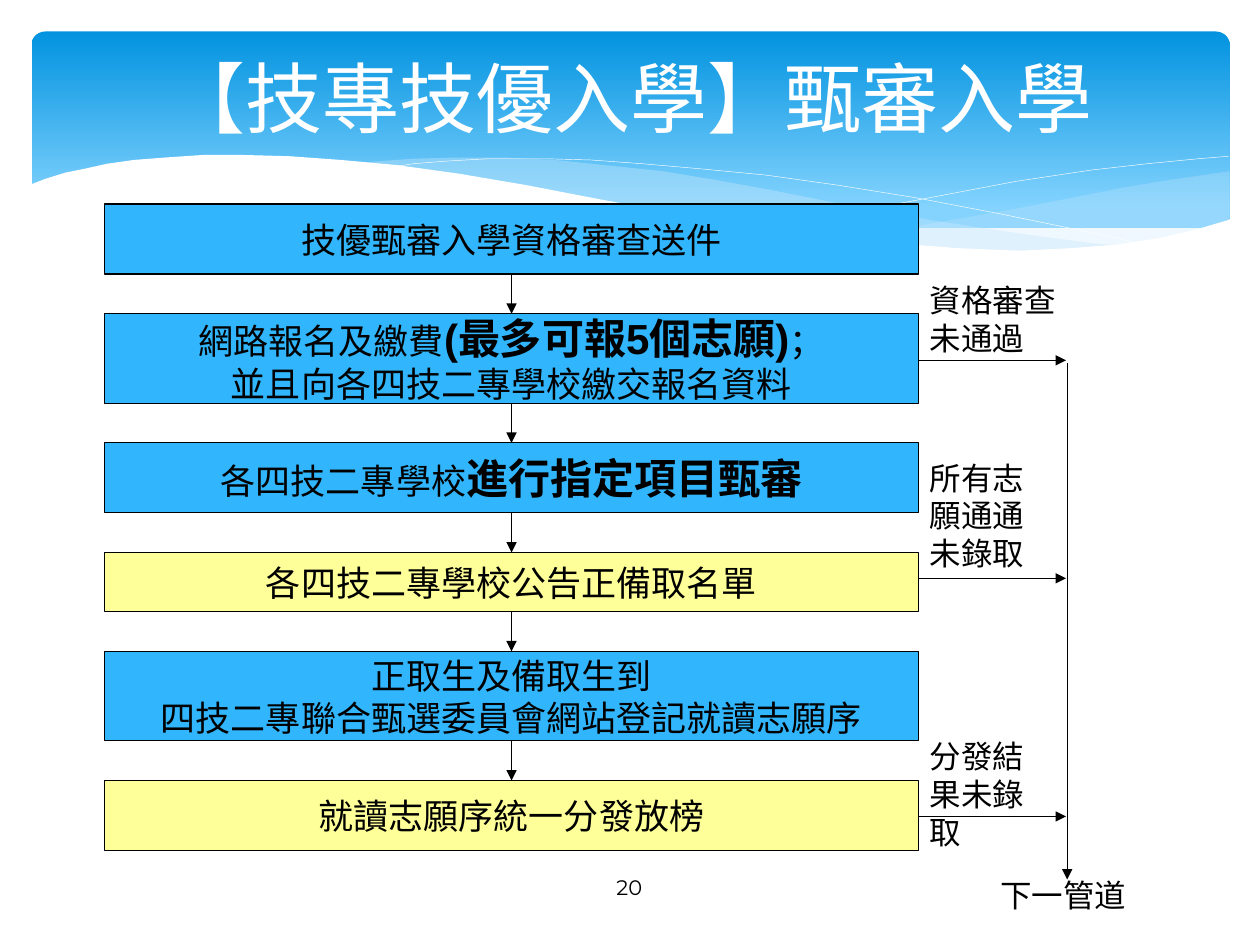
from lxml.etree import SubElement
from pptx import Presentation
from pptx.dml.color import RGBColor
from pptx.enum.shapes import MSO_CONNECTOR as CONN, MSO_SHAPE as SHAPE
from pptx.enum.text import MSO_ANCHOR as ANCHOR, PP_ALIGN as ALIGN
from pptx.oxml.ns import qn
from pptx.util import Inches, Pt

COLS, ROWS = 1000, 750
BLUE, YELLOW, PALE, WHITE, BLACK = "31B6FD", "FFFF99", "C6E7FC", "FFFFFF", "000000"


def color(value):
    return RGBColor.from_string(value)


class Deck:
    def __init__(self, prs):
        self.s = prs.slides.add_slide(prs.slide_layouts[6])
        self.col = prs.slide_width / COLS
        self.row = prs.slide_height / ROWS
        self.font = "Arial"

    def place(self, x, y, w, h):
        return [round(v) for v in (x * self.col, y * self.row, w * self.col, h * self.row)]

    def paint(self, sp, fill=None, line=None, width=0.75, alpha=None):
        sp.shadow.inherit = False
        if fill:
            sp.fill.solid()
            sp.fill.fore_color.rgb = color(fill)
        else:
            sp.fill.background()
        if alpha:
            node = sp._element.spPr.find(qn("a:solidFill"))[0]
            SubElement(node, qn("a:alpha"), val=str(alpha * 1000))
        if line:
            sp.line.color.rgb = color(line)
            sp.line.width = Pt(width)
        else:
            sp.line.fill.background()

    def set_text(self, sp, lines, size, ink=BLACK, font=None, align=ALIGN.CENTER,
                 anchor=ANCHOR.MIDDLE, wrap=True):
        tf = sp.text_frame
        tf.word_wrap = wrap
        tf.vertical_anchor = anchor
        for i, runs in enumerate(lines):
            p = tf.add_paragraph() if i else tf.paragraphs[0]
            p.alignment = align
            for text, strong in runs:
                r = p.add_run()
                r.text = text
                r.font.name = font or self.font
                r.font.size = Pt(size + 4 if strong else size)
                r.font.bold = strong
                r.font.color.rgb = color(ink)

    def banner(self, x, y, w, h, top, bottom):
        sp = self.s.shapes.add_shape(SHAPE.ROUNDED_RECTANGLE, *self.place(x, y, w, h))
        sp.adjustments[0] = 0.07
        self.paint(sp)
        sp.fill.gradient()
        sp.fill.gradient_angle = 270
        for stop, position, shade in zip(sp.fill.gradient_stops, (0, 0.9), (top, bottom)):
            stop.position = position
            stop.color.rgb = color(shade)

    def wave(self, points, fill=None, alpha=None):
        fb = self.s.shapes.build_freeform(*points[0], scale=(self.col, self.row))
        fb.add_line_segments(points[1:], close=bool(fill))
        self.paint(fb.convert_to_shape(), fill, None if fill else WHITE, 0.25, alpha)

    def box(self, x, y, w, h, fill, lines):
        sp = self.s.shapes.add_shape(SHAPE.RECTANGLE, *self.place(x, y, w, h))
        self.paint(sp, fill, BLACK)
        self.set_text(sp, lines, 20, wrap=False)

    def label(self, x, y, w, h, text, size=18, **style):
        sp = self.s.shapes.add_textbox(*self.place(x, y, w, h))
        self.set_text(sp, [[(text, False)]], size, **style)

    def arrow(self, x1, y1, x2, y2):
        ends = self.place(x1, y1, x2, y2)
        cn = self.s.shapes.add_connector(CONN.STRAIGHT, *ends)
        cn.line.color.rgb = color(BLACK)
        cn.line.width = Pt(0.75)
        spPr = cn._element.spPr
        SubElement(spPr.find(qn("a:ln")), qn("a:tailEnd"), type="triangle")
        SubElement(spPr, qn("a:effectLst"))


RIGHT_WAVE = [
    (975, 136), (948, 140), (921, 144), (891, 149), (861, 155), (805, 166), (753, 175),
    (706, 183), (661, 189), (691, 193), (718, 195), (745, 197), (769, 199), (803, 199),
    (835, 199), (863, 197), (889, 195), (913, 191), (935, 186), (963, 179), (976, 174),
    (976, 136)]
MIDDLE_WAVE = [
    (893, 195), (866, 193), (807, 185), (741, 175), (668, 162), (613, 151), (569, 143),
    (527, 136), (489, 132), (441, 127), (399, 125), (361, 125), (328, 126), (286, 129),
    (323, 133), (362, 138), (404, 145), (449, 154), (530, 169), (584, 178), (634, 186),
    (680, 192), (722, 196), (761, 199), (796, 200), (838, 200), (867, 198), (893, 195)]
FALLING_LINE = [
    (309, 133), (328, 130), (353, 128), (387, 126), (433, 126), (469, 127), (510, 130),
    (556, 134), (608, 139), (665, 147), (727, 157), (795, 170), (868, 185), (907, 194)]
RISING_LINE = [
    (613, 182), (652, 174), (695, 165), (748, 155), (806, 144), (866, 135), (910, 130),
    (951, 126), (975, 124)]
WHITE_WAVE = [
    (977, 174), (950, 182), (920, 189), (887, 194), (850, 197), (809, 199), (761, 197),
    (708, 193), (668, 189), (626, 184), (579, 177), (529, 168), (475, 158), (418, 147),
    (365, 138), (315, 131), (271, 127), (230, 124), (193, 123), (161, 123), (132, 125),
    (106, 127), (85, 130), (67, 134), (52, 137), (36, 142), (23, 147), (23, 241), (977, 241)]

STEPS = [
    (55.5, BLUE, [[("技優甄審入學資格審查送件", False)]]),
    (71, BLUE, [[("網路報名及繳費", False), ("(最多可報5個志願)", True), ("；", False)],
                [("並且向各四技二專學校繳交報名資料", False)]]),
    (55.5, BLUE, [[("各四技二專學校", False), ("進行指定項目甄審", True)]]),
    (47, YELLOW, [[("各四技二專學校公告正備取名單", False)]]),
    (71, BLUE, [[("正取生及備取生到", False)],
                [("四技二專聯合甄選委員會網站登記就讀志願序", False)]]),
    (55.5, YELLOW, [[("就讀志願序統一分發放榜", False)]]),
]
EXITS = [
    (286, 218, 134, 70, "資格審查未通過"),
    (459, 359, 96, 100, "所有志願通通未錄取"),
    (648, 580, 96, 100, "分發結果未錄取"),
]


def main():
    prs = Presentation()
    prs.slide_width, prs.slide_height = Inches(10), Inches(7.5)
    deck = Deck(prs)

    deck.banner(25, 25, 951, 156, "0293E0", "83D3FE")
    deck.wave(RIGHT_WAVE, PALE, 29)
    deck.wave(MIDDLE_WAVE, PALE, 40)
    deck.wave(FALLING_LINE)
    deck.wave(RISING_LINE)
    deck.wave(WHITE_WAVE, WHITE)
    deck.label(436, 684, 127, 40, "20", 12, font="Montserrat")
    deck.label(62, 27, 877, 100, "【技專技優入學】甄審入學", 44, ink=WHITE, font="Cabin")

    left, width, gap, top = 83, 646, 31.5, 162
    center, right, bypass = left + width / 2, left + width, 847
    for i, (height, fill, lines) in enumerate(STEPS):
        if i:
            deck.arrow(center, top - gap, center, top)
        deck.box(left, top, width, height, fill, lines)
        top += height + gap

    side = dict(align=ALIGN.LEFT, anchor=ANCHOR.TOP)
    for y, label_top, label_width, label_height, text in EXITS:
        deck.arrow(right, y, bypass - 1, y)
        deck.label(right - 1, label_top, label_width, label_height, text, **side)
    deck.arrow(bypass, 288, bypass, 698)
    deck.label(784, 690, 134, 40, "下一管道", font="Noto Sans CJK SC", **side)

    prs.save("out.pptx")


if __name__ == "__main__":
    main()
